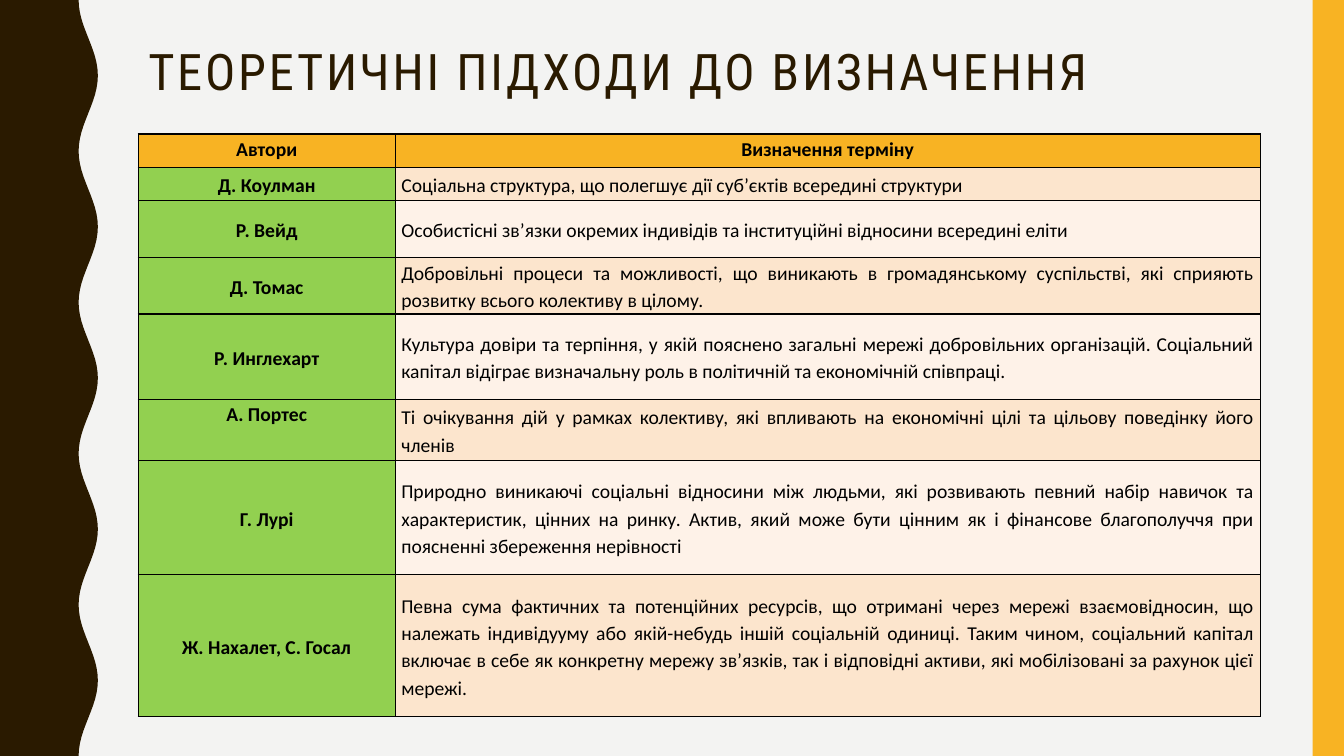
import math
from dataclasses import dataclass

from lxml import etree
from pptx import Presentation
from pptx import util as u
from pptx.dml import color
from pptx.enum import shapes, text
from pptx.oxml import ns

COLORS = {
    "background": "F3F3F2",
    "brown": "2A1A00",
    "amber": "F8B323",
    "green": "92D050",
    "peach": "FCE5CD",
    "cream": "FEF2E8",
    "black": "000000",
}

# Grid: 100 columns by 100 rows over the whole slide
WIDTH, HEIGHT = u.Inches(13.33), u.Inches(7.5)
LEFT, AUTHOR_COLUMNS, DEFINITION_COLUMNS = 10.28, 19.13, 64.37
CONTENT_COLUMNS = AUTHOR_COLUMNS + DEFINITION_COLUMNS
WAVE_MIN, WAVE_MAX, WAVE_COUNT, WAVE_STEPS = 5.85, 7.28, 5, 24


@dataclass
class Entry:
    author: str
    definition: str
    rows: float
    author_anchor: text.MSO_ANCHOR = text.MSO_ANCHOR.MIDDLE


HEADER = Entry("Автори", "Визначення терміну", 4.4, text.MSO_ANCHOR.TOP)
ENTRIES = [
    Entry("Д. Коулман", "Соціальна структура, що полегшує дії суб’єктів всередині структури", 4.4),
    Entry("Р. Вейд", "Особистісні зв’язки окремих індивідів та інституційні відносини "
          "всередині еліти", 7.5),
    Entry("Д. Томас", "Добровільні процеси та можливості, що виникають в громадянському "
          "суспільстві, які сприяють розвитку всього колективу в цілому.", 7.5),
    Entry("Р. Инглехарт", "Культура довіри та терпіння, у якій пояснено загальні мережі "
          "добровільних організацій. Соціальний капітал відіграє визначальну роль в "
          "політичній та економічній співпраці.", 11.3),
    Entry("А. Портес", "Ті очікування дій у рамках колективу, які впливають на економічні "
          "цілі та цільову поведінку його членів", 8.13, text.MSO_ANCHOR.TOP),
    Entry("Г. Лурі", "Природно виникаючі соціальні відносини між людьми, які розвивають "
          "певний набір навичок та характеристик, цінних на ринку. Актив, який може бути "
          "цінним як і фінансове благополуччя при поясненні збереження нерівності", 15.07),
    Entry("Ж. Нахалет, С. Госал", "Певна сума фактичних та потенційних ресурсів, що отримані "
          "через мережі взаємовідносин, що належать індивідууму або якій-небудь іншій "
          "соціальній одиниці. Таким чином, соціальний капітал включає в себе як конкретну "
          "мережу зв’язків, так і відповідні активи, які мобілізовані за рахунок цієї "
          "мережі.", 18.8),
]


def columns(count: float) -> int:
    return round(WIDTH * count / 100)


def rows(count: float) -> int:
    return round(HEIGHT * count / 100)


def paint(fill, name: str) -> None:
    fill.solid()
    fill.fore_color.rgb = color.RGBColor.from_string(COLORS[name])


def write(frame, content: str, *, size: float = 14, font: str = "Calibri",
          ink: str = "black", bold: bool = False, spacing: float = 1.15,
          align: text.PP_ALIGN = text.PP_ALIGN.LEFT, tracking: float = 0) -> None:
    paragraph = frame.paragraphs[0]
    paragraph.alignment = align
    paragraph.line_spacing = spacing
    run = paragraph.add_run()
    run.text = content
    run.font.size = u.Pt(size)
    run.font.name = font
    run.font.bold = bold
    run.font.color.rgb = color.RGBColor.from_string(COLORS[ink])
    if tracking:
        run.font._element.set("spc", str(round(tracking * 100)))


def draw_solid(shape, name: str) -> None:
    paint(shape.fill, name)
    shape.line.fill.background()
    shape.shadow.inherit = False


def add_wave(slide) -> None:
    middle, swing = (WAVE_MIN + WAVE_MAX) / 2, (WAVE_MAX - WAVE_MIN) / 2
    total = WAVE_COUNT * WAVE_STEPS
    edge = [(columns(middle - swing * math.cos(math.tau * step / WAVE_STEPS)),
             rows(100 * step / total)) for step in range(total + 1)]
    builder = slide.shapes.build_freeform(0, 0)
    builder.add_line_segments(edge + [(0, HEIGHT)], close=True)
    draw_solid(builder.convert_to_shape(), "brown")


def add_borders(cell, points: float = 1) -> None:
    properties = cell._tc.get_or_add_tcPr()
    for side in ("lnL", "lnR", "lnT", "lnB"):
        line = etree.SubElement(properties, ns.qn(f"a:{side}"), w=str(u.Pt(points)))
        solid = etree.SubElement(line, ns.qn("a:solidFill"))
        etree.SubElement(solid, ns.qn("a:srgbClr"), val=COLORS["black"])


def fill_cell(cell, content: str, fill: str, anchor: text.MSO_ANCHOR,
              align: text.PP_ALIGN, bold: bool) -> None:
    add_borders(cell)
    paint(cell.fill, fill)
    cell.margin_left = cell.margin_right = u.Inches(0.06)
    cell.margin_top = cell.margin_bottom = 0
    cell.vertical_anchor = anchor
    write(cell.text_frame, content, align=align, bold=bold)


def add_definitions(slide) -> None:
    entries = [HEADER, *ENTRIES]
    frame = slide.shapes.add_table(
        len(entries), 2, columns(LEFT), rows(17.73), columns(CONTENT_COLUMNS),
        rows(sum(entry.rows for entry in entries)))
    table = frame.table
    table.first_row = table.horz_banding = False
    for column, count in zip(table.columns, (AUTHOR_COLUMNS, DEFINITION_COLUMNS)):
        column.width = columns(count)
    for index, entry in enumerate(entries):
        table.rows[index].height = rows(entry.rows)
        header = entry is HEADER
        band = "peach" if index % 2 else "cream"
        fill_cell(table.cell(index, 0), entry.author, "amber" if header else "green",
                  entry.author_anchor, text.PP_ALIGN.CENTER, True)
        fill_cell(table.cell(index, 1), entry.definition, "amber" if header else band,
                  text.MSO_ANCHOR.TOP if header else text.MSO_ANCHOR.MIDDLE,
                  text.PP_ALIGN.CENTER if header else text.PP_ALIGN.JUSTIFY, header)


def add_title(slide) -> None:
    title = slide.shapes.title
    title.left, title.top = columns(LEFT), rows(5.6)
    title.width, title.height = columns(CONTENT_COLUMNS), rows(9.6)
    frame = title.text_frame
    frame.word_wrap = True
    frame.auto_size = text.MSO_AUTO_SIZE.NONE
    frame.vertical_anchor = text.MSO_ANCHOR.TOP
    write(frame, "ТЕОРЕТИЧНІ ПІДХОДИ ДО ВИЗНАЧЕННЯ", size=36, font="Roboto Condensed",
          ink="brown", spacing=0.9, tracking=2)


def main() -> None:
    presentation = Presentation()
    presentation.slide_width, presentation.slide_height = WIDTH, HEIGHT
    slide = presentation.slides.add_slide(presentation.slide_layouts[5])
    paint(slide.background.fill, "background")

    # Side decoration
    add_wave(slide)
    bar = slide.shapes.add_shape(shapes.MSO_SHAPE.RECTANGLE, columns(97.67), 0,
                                 columns(2.33), HEIGHT)
    draw_solid(bar, "amber")

    # Heading and table
    add_title(slide)
    add_definitions(slide)
    presentation.save("out.pptx")


if __name__ == "__main__":
    main()
